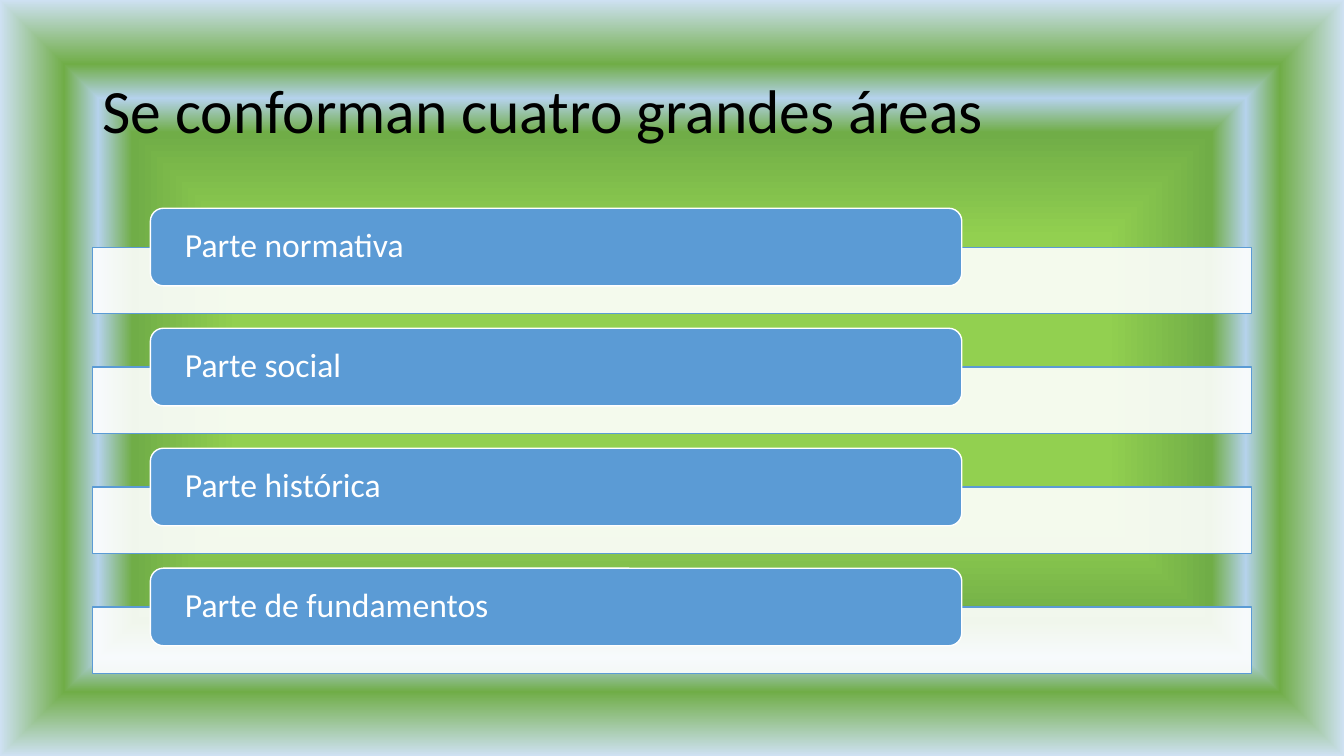
from dataclasses import dataclass

from lxml.etree import SubElement
from pptx import Presentation
from pptx.dml.color import RGBColor
from pptx.enum.shapes import MSO_SHAPE as Shape
from pptx.enum.text import MSO_ANCHOR as Anchor, PP_ALIGN as Align
from pptx.oxml import parse_xml
from pptx.oxml.ns import nsdecls, qn
from pptx.util import Pt


@dataclass(frozen=True)
class Theme:
    font: str = "Calibri"
    title_size: int = 44
    area_size: int = 24
    black: str = "000000"
    white: str = "FFFFFF"
    blue: str = "5B9BD5"
    backdrop: tuple = ((0, "92D050"), (37, "92D050"), (65, "70AD47"),
                       (74, "B5D2EC"), (83, "70AD47"), (100, "CEE1F2"))


theme = Theme()


def write(frame, text, size, color, inset):
    frame.text = text
    frame_format = {
        "word_wrap": True, "vertical_anchor": Anchor.MIDDLE,
        "margin_left": Pt(inset), "margin_right": Pt(inset),
    }
    for name, value in frame_format.items():
        setattr(frame, name, value)
    paragraph = frame.paragraphs[0]
    paragraph.alignment, paragraph.line_spacing = Align.LEFT, 0.9
    font = paragraph.font
    font.name, font.size = theme.font, Pt(size)
    font.color.rgb = RGBColor.from_string(color)


def add_panel(kind, box, fill, line):
    panel = slide.shapes.add_shape(kind, *map(Pt, box))
    panel.shadow.inherit = False
    panel.fill.solid()
    panel.fill.fore_color.rgb = RGBColor.from_string(fill)
    panel.line.color.rgb = RGBColor.from_string(line)
    panel.line.width = Pt(1)
    return panel


deck = Presentation()
deck.slide_width, deck.slide_height = Pt(960), Pt(540)
slide = deck.slides.add_slide(deck.slide_layouts[5])

# Background: gradient spreading from the centre to the edges
slide.background.fill.gradient()
gradient = slide.element.find(f".//{qn('a:gradFill')}")
stops = "".join(
    f'<a:gs pos="{position * 1000}"><a:srgbClr val="{color}"/></a:gs>'
    for position, color in theme.backdrop
)
gradient.getparent().replace(gradient, parse_xml(
    f'<a:gradFill {nsdecls("a")} rotWithShape="1"><a:gsLst>{stops}</a:gsLst>'
    '<a:path path="shape"><a:fillToRect l="50000" t="50000" r="50000" b="50000"/>'
    '</a:path></a:gradFill>'
))

# Title
title = slide.shapes.title
title_box = {"left": 66, "top": 28.75, "width": 828, "height": 104.4}
for name, value in title_box.items():
    setattr(title, name, Pt(value))
write(title.text_frame, "Se conforman cuatro grandes áreas",
      theme.title_size, theme.black, inset=7.2)

# Areas: a translucent band with a label overlapping its upper edge
areas = ["Parte normativa", "Parte social", "Parte histórica", "Parte de fundamentos"]
first_top, pitch = 148.8, 85.7
for index, area in enumerate(areas):
    top = first_top + index * pitch
    band = add_panel(Shape.RECTANGLE, (66, top + 27.8, 828, 47.5),
                     theme.white, theme.blue)
    band_color = band.fill._xPr.find(f"{qn('a:solidFill')}/{qn('a:srgbClr')}")
    SubElement(band_color, qn("a:alpha"), val="90000")

    label = add_panel(Shape.ROUNDED_RECTANGLE, (107.4, top, 579.6, 55.4),
                      theme.blue, theme.white)
    write(label.text_frame, area, theme.area_size, theme.white, inset=22)

deck.save("out.pptx")
